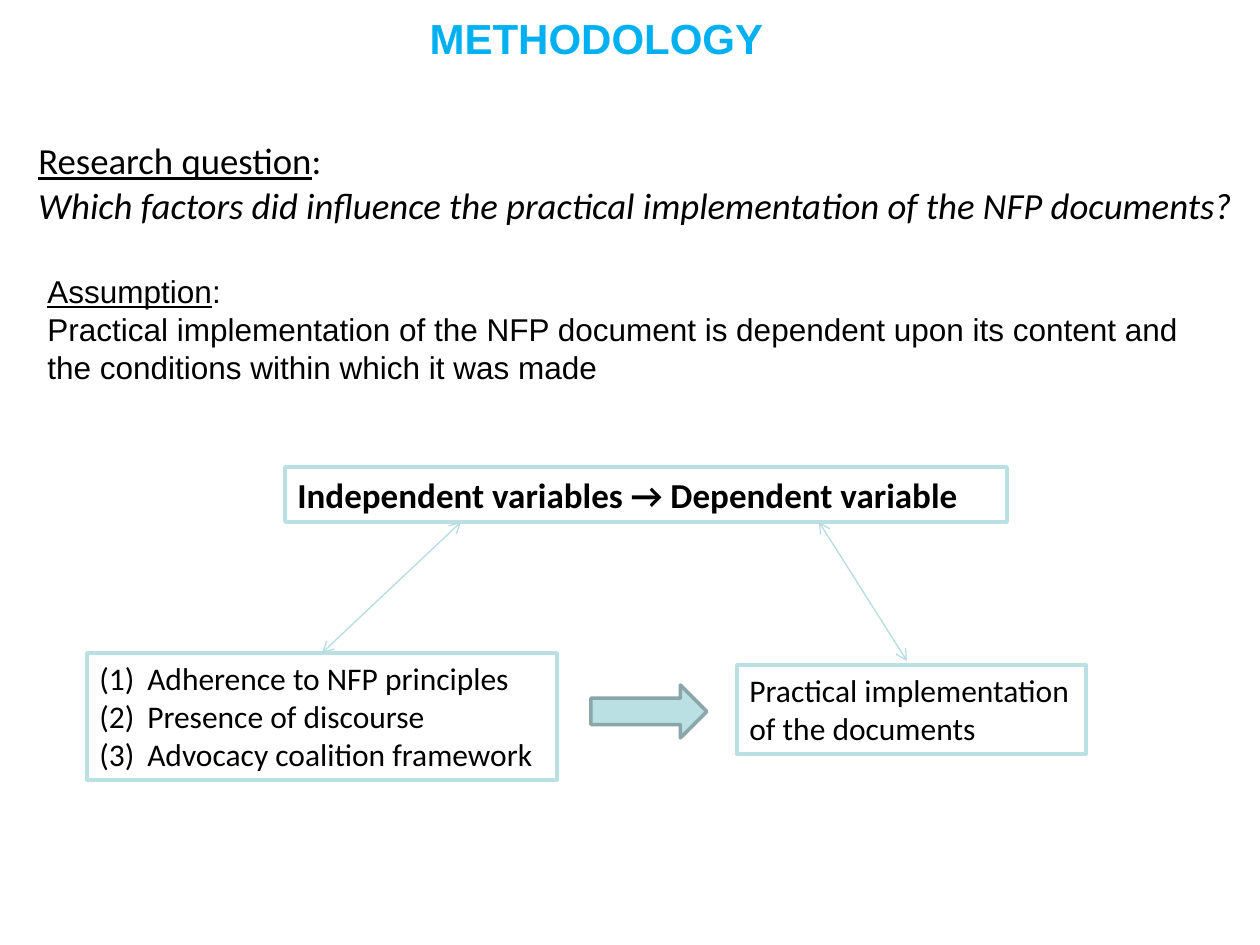
from lxml import etree
from pptx import Presentation
from pptx import util as u
from pptx.dml.color import RGBColor
from pptx.enum import shapes, text
from pptx.oxml.ns import qn

SCALE = 914400 / 126
BLACK, WHITE, TEAL = "000000", "FFFFFF", "BBE0E3"


def px(length):
    """Turn a length in px into EMU."""
    return u.Emu(round(length * SCALE))


def colour(value):
    """Turn a hex string into a colour."""
    return RGBColor.from_string(value)


def write(shape, lines, size, font, ink=BLACK, wrap=False):
    """Fill a shape with lines, each a list of (words, styles) runs."""
    frame = shape.text_frame
    frame.word_wrap = wrap
    frame.auto_size = text.MSO_AUTO_SIZE.SHAPE_TO_FIT_TEXT
    frame.vertical_anchor = text.MSO_ANCHOR.TOP
    for index, runs in enumerate(lines):
        para = frame.add_paragraph() if index else frame.paragraphs[0]
        para.alignment = text.PP_ALIGN.LEFT
        for words, styles in runs:
            span = para.add_run()
            span.text = words
            span.font.size = u.Pt(size)
            span.font.name = font
            span.font.color.rgb = colour(ink)
            for style in styles:
                setattr(span.font, style, True)


def add_title(page, words, place):
    """Move the title placeholder and write the heading."""
    title = page.shapes.title
    title.left, title.top, title.width, title.height = map(px, place)
    write(title, [[(words, ["bold"])]], 24, "Arial", "00B0F0")


def add_text(page, place, lines, size, font, wrap=False):
    """Add a plain text box."""
    box = page.shapes.add_textbox(*map(px, place))
    write(box, lines, size, font, wrap=wrap)


def add_shape(page, kind, place, fill, line):
    """Add a flat preset shape with a 2 pt outline."""
    shape = page.shapes.add_shape(kind, *map(px, place))
    shape.shadow.inherit = False
    shape.fill.solid()
    shape.fill.fore_color.rgb = colour(fill)
    shape.line.color.rgb = colour(line)
    shape.line.width = u.Pt(2)
    return shape


def add_box(page, place, lines, size, wrap=False):
    """Add an outlined box with Calibri text."""
    box = add_shape(page, shapes.MSO_SHAPE.RECTANGLE, place, WHITE, TEAL)
    write(box, lines, size, "Calibri", wrap=wrap)
    return box


def number(box):
    """Number the paragraphs of a box as (1), (2), (3)."""
    for para in box.text_frame.paragraphs:
        props = para._p.get_or_add_pPr()
        props.set("marL", str(u.Inches(0.38)))
        props.set("indent", str(-u.Inches(0.38)))
        etree.SubElement(props, qn("a:buAutoNum"), type="arabicParenBoth")


def add_link(page, start, end):
    """Add a thin line with open arrowheads at both ends."""
    link = page.shapes.add_connector(shapes.MSO_CONNECTOR.STRAIGHT, *map(px, start + end))
    link.line.color.rgb = colour("B6DCDF")
    link.line.width = u.Pt(0.75)
    outline = link.line._get_or_add_ln()
    for tag in ("a:headEnd", "a:tailEnd"):
        etree.SubElement(outline, qn(tag), type="arrow")
    etree.SubElement(link._element.spPr, qn("a:effectLst"))
    return link


def main():
    """Build the methodology slide."""
    deck = Presentation()
    deck.slide_width, deck.slide_height = px(1260), px(945)
    page = deck.slides.add_slide(deck.slide_layouts[5])

    add_box(page, (285, 467, 722, 55),
            [[("Independent variables → Dependent variable", ["bold"])]], 20, wrap=True)
    factors = add_box(page, (87, 653, 470, 127), [
        [("Adherence to NFP principles", [])],
        [("Presence of discourse", [])],
        [("Advocacy coalition framework", [])],
    ], 18)
    number(factors)
    add_box(page, (737, 665, 349, 89), [
        [("Practical implementation", [])],
        [("of the documents", [])],
    ], 18)
    add_shape(page, shapes.MSO_SHAPE.RIGHT_ARROW, (591, 685, 116, 53), TEAL, "8AA6A8")

    add_text(page, (26, 132, 1239, 102), [
        [("Research question", ["underline"]), (":", [])],
        [("Which factors did influence the practical implementation of the NFP documents?",
          ["italic"])],
    ], 21, "Calibri")
    add_title(page, "METHODOLOGY", (417, 6, 362, 63))
    add_text(page, (35, 266, 1191, 127), [
        [("Assumption", ["underline"]), (":", [])],
        [("Practical implementation of the NFP document is dependent upon its content and "
          "the conditions within which it was made", [])],
    ], 18, "Arial", wrap=True)

    add_link(page, (322, 653), (461, 522)).begin_connect(factors, 0)
    add_link(page, (907, 661), (819, 522))
    deck.save("out.pptx")


if __name__ == "__main__":
    main()
